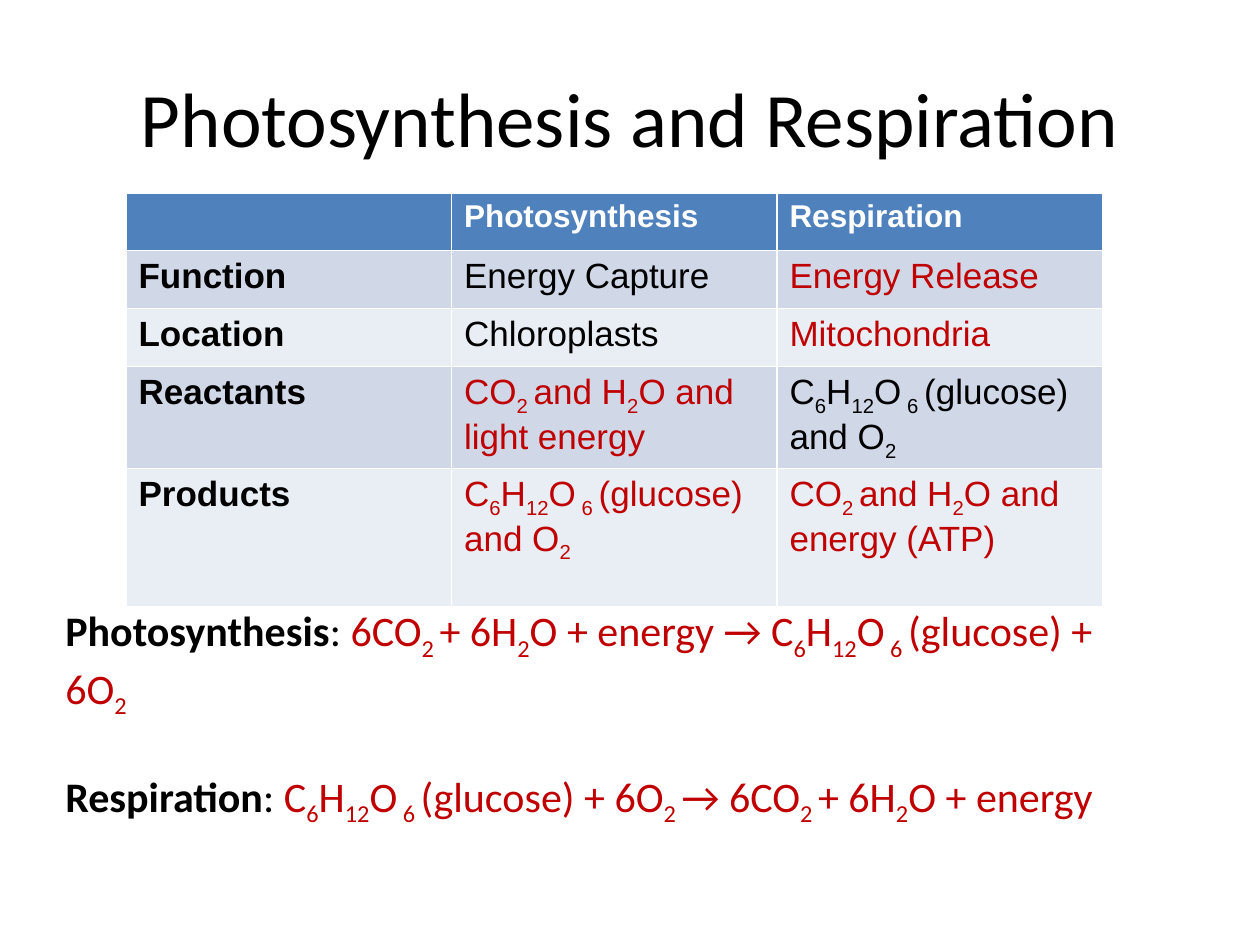
"""Build a slide comparing photosynthesis and respiration."""
from dataclasses import dataclass

from pptx import Presentation
from pptx.dml.color import RGBColor as Color
from pptx.enum.text import MSO_ANCHOR as Anchor, PP_ALIGN as Align
from pptx.util import Inches, Pt


@dataclass(frozen=True)
class Theme:
    heading_font: str = "Calibri"
    table_font: str = "Arial"
    black: str = "000000"
    white: str = "FFFFFF"
    red: str = "C00000"
    header_fill: str = "4F81BD"
    band_fills: tuple = ("D0D8E8", "E9EDF4")
    title_size: int = 44
    equation_size: int = 24
    cell_size: int = 20
    header_size: int = 18


THEME = Theme()
TITLE = "Photosynthesis and Respiration"
GLUCOSE = "C~6~H~12~O~ 6 ~(glucose)"
HEADER = ("", "Photosynthesis", "Respiration")
ROWS = [
    ("Function", ("Energy Capture", THEME.black), ("Energy Release", THEME.red)),
    ("Location", ("Chloroplasts", THEME.black), ("Mitochondria", THEME.red)),
    ("Reactants", ("CO~2 ~and H~2~O and light energy", THEME.red),
     (f"{GLUCOSE} and O~2~", THEME.black)),
    ("Products", (f"{GLUCOSE} and O~2~", THEME.red),
     ("CO~2 ~and H~2~O and energy (ATP)", THEME.red)),
]
ROW_HEIGHTS = (0.46, 0.46, 0.46, 0.8, 1.1)
TABLE_AREA = (1, 1.53, 7.75, sum(ROW_HEIGHTS))
EQUATIONS = [
    ("Photosynthesis", f"6CO~2 ~+ 6H~2~O + energy → {GLUCOSE} + 6O~2~"),
    ("Respiration", f"{GLUCOSE} + 6O~2 ~→ 6CO~2 ~+ 6H~2~O + energy"),
]
EQUATION_GAP = 29


def inches(*values):
    return [Inches(value) for value in values]


def write(para, text, font, size, color, bold=False):
    """Add text to a paragraph, with subscripts between tildes."""
    for index, part in enumerate(text.split("~")):
        if not part:
            continue
        span = para.add_run()
        span.text = part
        span.font.name = font
        span.font.size = Pt(size)
        span.font.bold = bold
        span.font.color.rgb = Color.from_string(color)
        if index % 2:
            span.font._element.set("baseline", "-25000")


def fill_cell(cell, fill, text, size, color, bold=False):
    cell.fill.solid()
    cell.fill.fore_color.rgb = Color.from_string(fill)
    write(cell.text_frame.paragraphs[0], text, THEME.table_font, size, color, bold)


def add_title(page):
    title = page.shapes.title
    title.left, title.top, title.width, title.height = inches(0.5, 0.3, 9, 1.25)
    title.text_frame.vertical_anchor = Anchor.MIDDLE
    para = title.text_frame.paragraphs[0]
    para.alignment = Align.CENTER
    write(para, TITLE, THEME.heading_font, THEME.title_size, THEME.black)


def add_comparison(page):
    table = page.shapes.add_table(
        len(ROWS) + 1, len(HEADER), *inches(*TABLE_AREA)).table
    for column in table.columns:
        column.width = Inches(TABLE_AREA[2] / len(HEADER))
    for row, height in zip(table.rows, ROW_HEIGHTS):
        row.height = Inches(height)
    for column, text in enumerate(HEADER):
        fill_cell(table.cell(0, column), THEME.header_fill, text,
                  THEME.header_size, THEME.white, True)
    for index, (label, *entries) in enumerate(ROWS):
        fill = THEME.band_fills[index % 2]
        fill_cell(table.cell(index + 1, 0), fill, label,
                  THEME.cell_size, THEME.black, True)
        for column, (text, color) in enumerate(entries, 1):
            fill_cell(table.cell(index + 1, column), fill, text,
                      THEME.cell_size, color)


def add_equations(page):
    frame = page.shapes.add_textbox(*inches(0.42, 4.75, 8.58, 2.49)).text_frame
    frame.word_wrap = True
    for index, (label, equation) in enumerate(EQUATIONS):
        para = frame.add_paragraph() if index else frame.paragraphs[0]
        if index:
            para.space_before = Pt(EQUATION_GAP)
        style = (THEME.heading_font, THEME.equation_size)
        write(para, label, *style, THEME.black, True)
        write(para, ": ", *style, THEME.black)
        write(para, equation, *style, THEME.red)


def main():
    deck = Presentation()
    deck.slide_width, deck.slide_height = inches(10, 7.5)
    page = deck.slides.add_slide(deck.slide_layouts.get_by_name("Title Only"))
    add_title(page)
    add_comparison(page)
    add_equations(page)
    deck.save("out.pptx")


if __name__ == "__main__":
    main()
